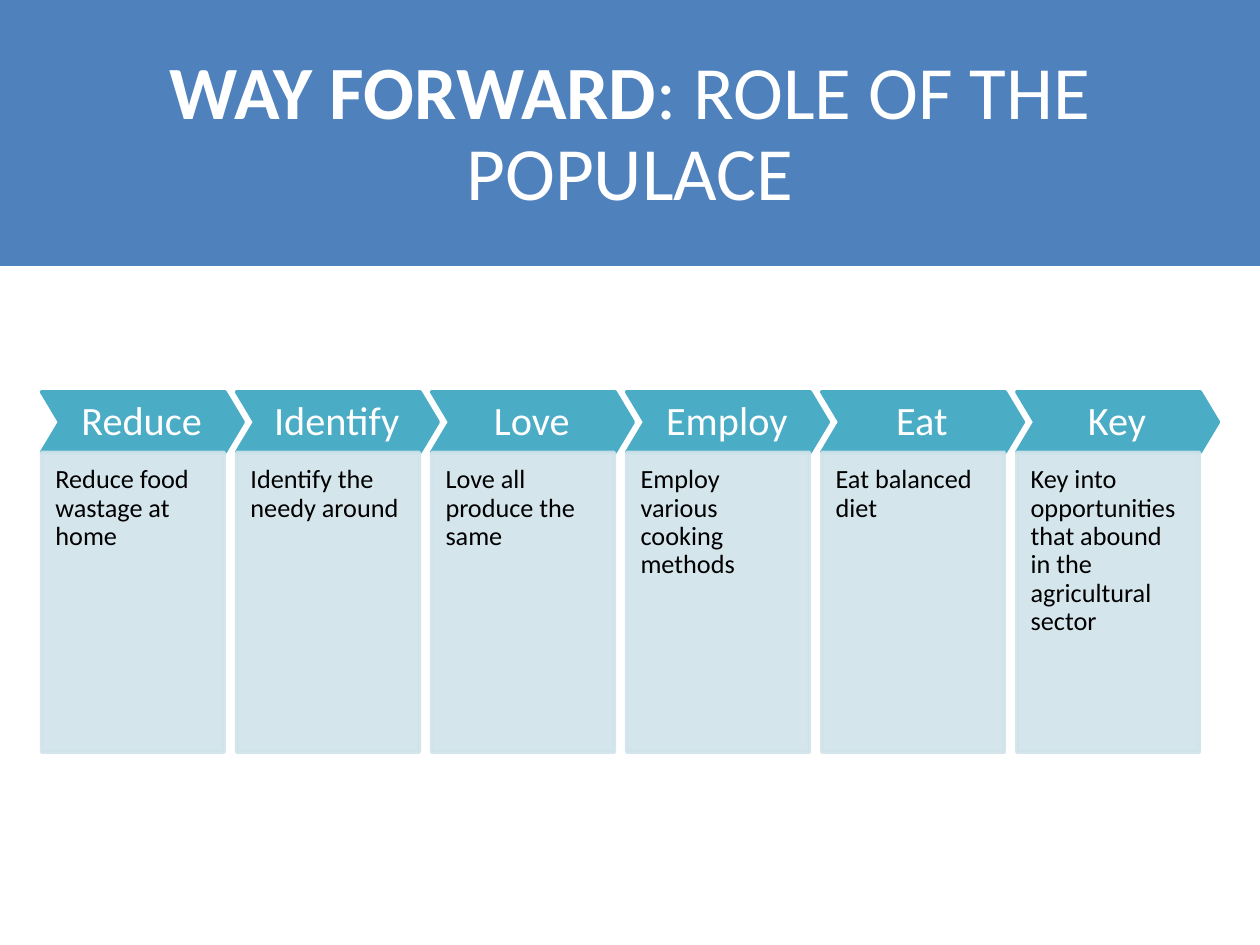
import pptx
import pptx.util
import pptx.dml.color
import pptx.enum.shapes
import pptx.enum.text
import pptx.oxml.ns
from lxml import etree

Inches = pptx.util.Inches
SHAPE = pptx.enum.shapes.MSO_SHAPE
ANCHOR = pptx.enum.text.MSO_ANCHOR
ALIGN = pptx.enum.text.PP_ALIGN


def rgb(hex_color):
    return pptx.dml.color.RGBColor.from_string(hex_color)


class SlideBuilder:
    font = "Calibri"
    banner = "4F81BD"
    accent = "4BACC6"
    panel = "D0E3EA"
    light = "FFFFFF"
    dark = "000000"

    def __init__(self, slide):
        self.slide = slide

    def shape(self, kind, box, color, outlined=False, opacity=None):
        item = self.slide.shapes.add_shape(kind, *map(Inches, box))
        item.shadow.inherit = False
        item.fill.solid()
        item.fill.fore_color.rgb = rgb(color)
        if outlined:
            item.line.color.rgb = rgb(color)
            item.line.width = pptx.util.Pt(2)
        else:
            item.line.fill.background()
        if opacity is not None:
            qn = pptx.oxml.ns.qn
            for color_node in item._element.spPr.iter(qn("a:srgbClr")):
                etree.SubElement(color_node, qn("a:alpha"), val=str(opacity * 1000))
        return item

    def text(self, box, runs, size, color, insets, align=ALIGN.LEFT, anchor=ANCHOR.TOP):
        frame = self.slide.shapes.add_textbox(*map(Inches, box)).text_frame
        frame.word_wrap = True
        frame.vertical_anchor = anchor
        (frame.margin_left, frame.margin_top,
         frame.margin_right, frame.margin_bottom) = map(Inches, insets)
        paragraph = frame.paragraphs[0]
        paragraph.alignment = align
        paragraph.line_spacing = 0.9
        for wording, bold in runs:
            run = paragraph.add_run()
            run.text = wording
            run.font.name = self.font
            run.font.size = pptx.util.Pt(size)
            run.font.bold = bold
            run.font.color.rgb = rgb(color)

    def title(self, runs):
        self.shape(SHAPE.RECTANGLE, (0, -0.01, 10, 2.12), self.banner)
        self.text((0.32, 0.35, 9.36, 1.45), runs, 43, self.light,
                  (0.1, 0.05, 0.1, 0.05), ALIGN.CENTER, ANCHOR.MIDDLE)

    def step(self, left, heading, detail):
        # Chevron heading
        top, height = 3.11, 0.48
        chevron = self.shape(SHAPE.CHEVRON, (left, top, 1.6, height), self.accent, True)
        chevron.adjustments[0] = 0.3
        self.text((left + 0.14, top, 1.31, height), [(heading, False)], 23, self.light,
                  (0.06,) * 4, ALIGN.CENTER, ANCHOR.MIDDLE)
        # Detail panel
        panel = (left, top + height, 1.45, 2.38)
        self.shape(SHAPE.RECTANGLE, panel, self.panel, True, opacity=90)
        self.text(panel, [(detail, False)], 15, self.dark, (0.11, 0.11, 0.11, 0.23))


def main():
    deck = pptx.Presentation()
    deck.slide_width, deck.slide_height = Inches(10), Inches(7.5)
    builder = SlideBuilder(deck.slides.add_slide(deck.slide_layouts[6]))

    # Title banner
    builder.title([("WAY FORWARD", True), (": ROLE OF THE POPULACE", False)])

    # Row of steps, evenly spaced
    steps = [
        ("Reduce", "Reduce food wastage at home"),
        ("Identify", "Identify the needy around"),
        ("Love", "Love all produce the same"),
        ("Employ", "Employ various cooking methods"),
        ("Eat", "Eat balanced diet"),
        ("Key", "Key into opportunities that abound in the agricultural sector"),
    ]
    first_left, last_left = 0.33, 8.07
    pitch = (last_left - first_left) / (len(steps) - 1)
    for index, (heading, detail) in enumerate(steps):
        builder.step(first_left + index * pitch, heading, detail)

    deck.save("out.pptx")


if __name__ == "__main__":
    main()
